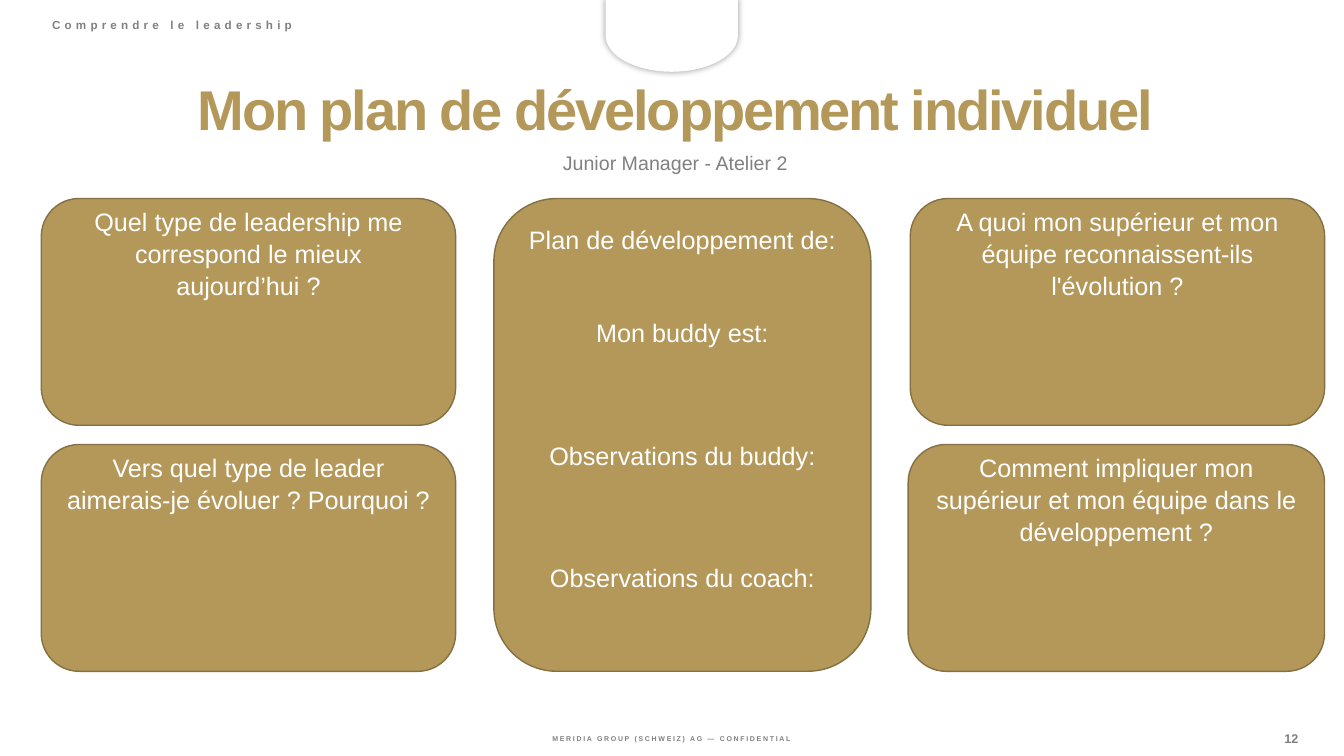
from lxml.etree import SubElement
from pptx import Presentation
from pptx.dml.color import RGBColor
from pptx.enum.shapes import MSO_SHAPE as Shape
from pptx.enum.text import MSO_ANCHOR as Anchor, MSO_AUTO_SIZE as AutoSize, PP_ALIGN as Align
from pptx.oxml.ns import qn
from pptx.util import Pt

GOLD = RGBColor(0xB3, 0x98, 0x5A)
DARK_GOLD = RGBColor(0x84, 0x70, 0x43)
GRAY = RGBColor(0x80, 0x80, 0x80)
WHITE = RGBColor(0xFF, 0xFF, 0xFF)

FONT = "Arial"
LINE_SPACING = 1.05
LINE_PITCH = 21.7

CARD_TOP, CARD_HEIGHT, ROW_STEP = 141.8, 162, 175.7
CARDS = [
    (29.5, 0, 296, "Quel type de leadership me correspond le mieux aujourd’hui ?"),
    (29.5, 1, 296, "Vers quel type de leader aimerais-je évoluer ? Pourquoi ?"),
    (650.2, 0, 296, "A quoi mon supérieur et mon équipe reconnaissent-ils l'évolution ?"),
    (648.7, 1, 297.4, "Comment impliquer mon supérieur et mon équipe dans le développement ?"),
]
# Each heading of the plan, with the free lines above it
PLAN = [
    ("Plan de développement de:", 0),
    ("Mon buddy est:", 2),
    ("Observations du buddy:", 3),
    ("Observations du coach:", 3),
]


def set_box(shape, box):
    for name, value in zip(("left", "top", "width", "height"), box):
        setattr(shape, name, Pt(value))


def write(paragraph, text, size, color, bold=False, tracking=0, **layout):
    """Fill a paragraph; tracking is the letter spacing in points."""
    formats = {"alignment": Align.CENTER, "space_before": Pt(0), **layout}
    for name, value in formats.items():
        setattr(paragraph, name, value)
    run = paragraph.add_run()
    run.text = text
    for name, value in {"name": FONT, "size": Pt(size), "bold": bold}.items():
        setattr(run.font, name, value)
    run.font.color.rgb = color
    if tracking:
        run._r.get_or_add_rPr().set("spc", str(round(tracking * 100)))


def fill_placeholder(shape, box, anchor, text, **formats):
    set_box(shape, box)
    frame = shape.text_frame
    frame.auto_size = AutoSize.NONE
    frame.vertical_anchor = anchor
    write(frame.paragraphs[0], text, **formats)


def add_label(slide, box, text, inset=(0, 0), **formats):
    """Add a gray bold line of text; inset is horizontal, vertical."""
    label = slide.shapes.add_textbox(*map(Pt, box))
    frame = label.text_frame
    frame.word_wrap = True
    frame.margin_left = frame.margin_right = Pt(inset[0])
    frame.margin_top = frame.margin_bottom = Pt(inset[1])
    write(frame.paragraphs[0], text, color=GRAY, bold=True, **formats)


def add_top_tab(slide, box):
    tab = slide.shapes.add_shape(Shape.FLOWCHART_DELAY, *map(Pt, box))
    tab.rotation = 90
    tab.fill.solid()
    tab.fill.fore_color.rgb = WHITE
    tab.line.color.rgb = WHITE
    tab.line.width = Pt(1)
    tab.shadow.inherit = False
    effects = tab._element.spPr.find(qn("a:effectLst"))
    shadow = SubElement(effects, qn("a:outerShdw"), blurRad=str(Pt(5)), dist="0",
                        dir="0", algn="ctr", rotWithShape="0")
    color = SubElement(shadow, qn("a:srgbClr"), val="000000")
    SubElement(color, qn("a:alpha"), val="40000")


def add_card(slide, box, headings, margin_top):
    """Add a gold card with (text, free lines above) headings from its top."""
    card = slide.shapes.add_shape(Shape.ROUNDED_RECTANGLE, *map(Pt, box))
    card.shadow.inherit = False
    card.fill.solid()
    card.fill.fore_color.rgb = GOLD
    card.line.color.rgb = DARK_GOLD
    card.line.width = Pt(1)
    frame = card.text_frame
    frame.word_wrap = True
    frame.vertical_anchor = Anchor.TOP
    frame.margin_top = Pt(margin_top)
    for index, (text, free_lines) in enumerate(headings):
        paragraph = frame.add_paragraph() if index else frame.paragraphs[0]
        write(paragraph, text, 18, WHITE, line_spacing=LINE_SPACING,
              space_before=Pt(free_lines * LINE_PITCH))


def add_header(slide):
    add_top_tab(slide, (454.3, -21.6, 51.1, 93.6))
    add_label(slide, (30.2, 11.5, 350.6, 15.1), "Comprendre le leadership", (7.2, 3.6),
              size=8.3, tracking=3, alignment=Align.LEFT, line_spacing=0.8)
    fill_placeholder(slide.shapes.title, (29.5, 54.7, 905.8, 51.1), Anchor.MIDDLE,
                     "Mon plan de développement individuel", size=40, color=GOLD,
                     bold=True, tracking=-1.5, line_spacing=0.9)
    fill_placeholder(slide.placeholders[1], (29.5, 107.3, 905.8, 22.3), Anchor.TOP,
                     "Junior Manager - Atelier 2", size=14, color=GRAY, line_spacing=0.8)


def add_plan(slide):
    for left, row, width, question in CARDS:
        box = (left, CARD_TOP + row * ROW_STEP, width, CARD_HEIGHT)
        add_card(slide, box, [(question, 0)], -3.3)
    add_card(slide, (352.8, CARD_TOP, 269.3, ROW_STEP + CARD_HEIGHT), PLAN, 4.4)


def add_footer(slide):
    add_label(slide, (297.4, 524.2, 365, 7.2), "MERIDIA GROUP (SCHWEIZ) AG — CONFIDENTIAL",
              (0, 0.7), size=5, tracking=1.2)
    add_label(slide, (895, 521.3, 54.7, 11.5), "12", (0, 0.7), size=9)


def main():
    presentation = Presentation()
    presentation.slide_width, presentation.slide_height = Pt(960), Pt(540)
    slide = presentation.slides.add_slide(presentation.slide_layouts[0])
    add_header(slide)
    add_plan(slide)
    add_footer(slide)
    presentation.save("out.pptx")


if __name__ == "__main__":
    main()
